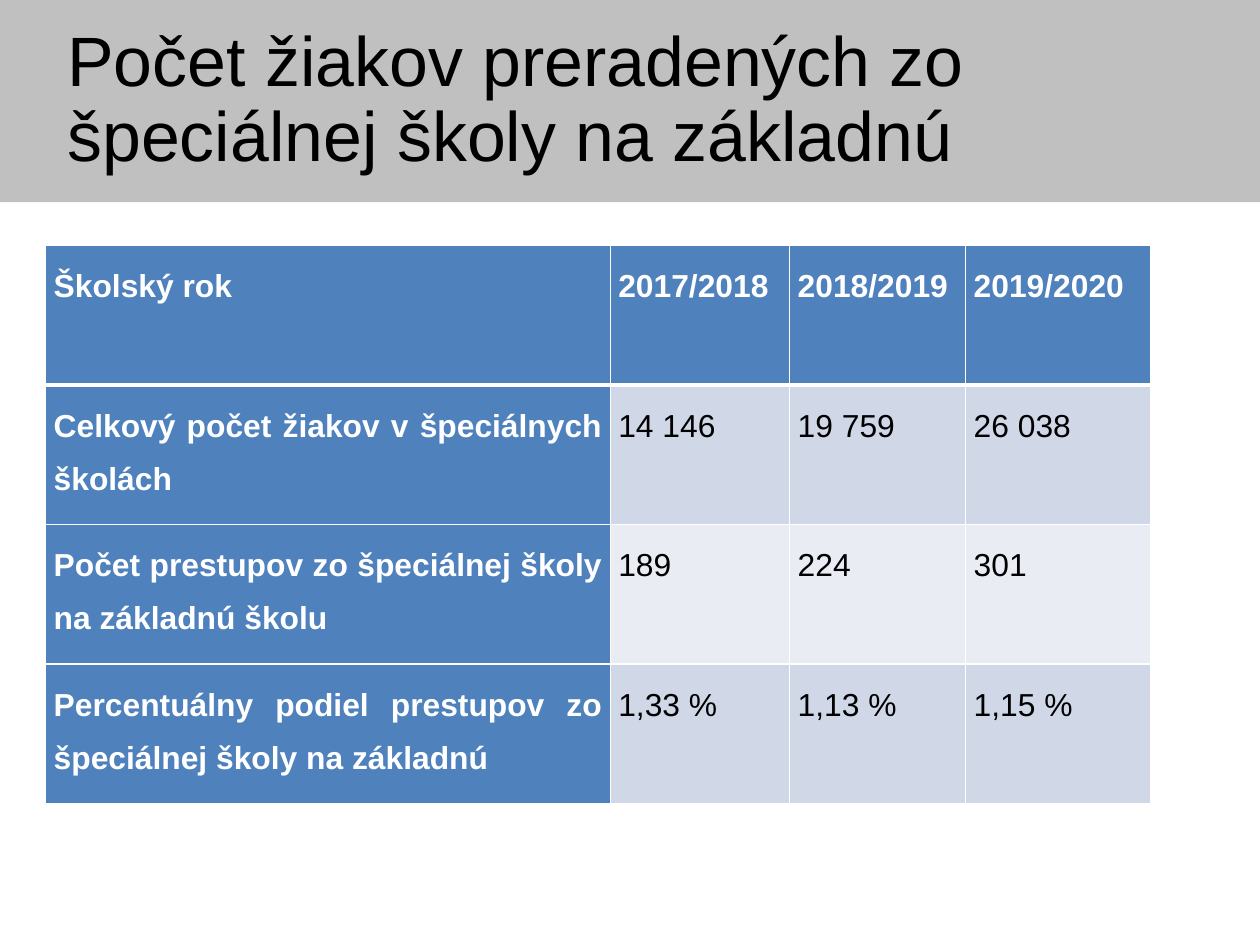
from lxml.etree import SubElement
from pptx import Presentation
from pptx.dml.color import RGBColor
from pptx.enum.shapes import MSO_SHAPE as Shape
from pptx.enum.text import MSO_ANCHOR as Anchor, PP_ALIGN as Align
from pptx.oxml.ns import qn
from pptx.util import Inches, Pt

TITLE = "Počet žiakov preradených zo špeciálnej školy na základnú"
ROWS = [
    ("Školský rok", "2017/2018", "2018/2019", "2019/2020"),
    ("Celkový počet žiakov v špeciálnych školách", "14 146", "19 759", "26 038"),
    ("Počet prestupov zo špeciálnej školy na základnú školu", "189", "224", "301"),
    ("Percentuálny podiel prestupov zo špeciálnej školy na základnú",
     "1,33 %", "1,13 %", "1,15 %"),
]
CM_PER_INCH = 2.54
SLIDE_WIDTH = Inches(28 / CM_PER_INCH)
SLIDE_HEIGHT = Inches(21 / CM_PER_INCH)
COLUMN_WIDTHS = (4.94, 1.57, 1.54, 1.62)
ROW_HEIGHT = 1.22
THIN, THICK = 0.96, 3

FONT = "Arial"
BLACK = RGBColor(0x00, 0x00, 0x00)
WHITE = RGBColor(0xFF, 0xFF, 0xFF)
GREY = RGBColor(0xC0, 0xC0, 0xC0)
BLUE = RGBColor(0x4F, 0x81, 0xBD)
BANDS = (RGBColor(0xE9, 0xEC, 0xF3), RGBColor(0xD0, 0xD8, 0xE7))


def add_run(paragraph, text, size, color, bold=False):
    run = paragraph.add_run()
    run.text = text
    run.font.name = FONT
    run.font.size = Pt(size)
    run.font.bold = bold
    run.font.color.rgb = color


def set_borders(cell, top, bottom):
    """Draw white cell borders; call before the cell gets its fill."""
    properties = cell._tc.get_or_add_tcPr()
    for side, width in (("L", THIN), ("R", THIN), ("T", top), ("B", bottom)):
        line = SubElement(properties, qn(f"a:ln{side}"), w=str(Pt(width)))
        fill = SubElement(line, qn("a:solidFill"))
        SubElement(fill, qn("a:srgbClr"), val=str(WHITE))


def add_title(slide):
    band = slide.shapes.add_shape(Shape.RECTANGLE, 0, 0, SLIDE_WIDTH, Inches(1.77))
    band.shadow.inherit = False
    band.fill.solid()
    band.fill.fore_color.rgb = GREY
    band.line.fill.background()

    title = slide.shapes.add_textbox(Inches(0.59), Inches(0.2), Inches(9.84), Inches(1.37))
    frame = title.text_frame
    frame.word_wrap = True
    frame.vertical_anchor = Anchor.MIDDLE
    frame.margin_left = frame.margin_right = frame.margin_top = frame.margin_bottom = 0
    paragraph = frame.paragraphs[0]
    paragraph.line_spacing = 0.9
    add_run(paragraph, TITLE, 44, BLACK)


def fill_cell(cell, text, row, column):
    is_heading = row == 0 or column == 0
    set_borders(cell, THICK if row == 1 else THIN, THICK if row == 0 else THIN)
    cell.fill.solid()
    cell.fill.fore_color.rgb = BLUE if is_heading else BANDS[row % 2]
    cell.margin_left = cell.margin_right = Inches(0.07)
    cell.margin_top = cell.margin_bottom = Inches(0.05)
    paragraph = cell.text_frame.paragraphs[0]
    paragraph.alignment = Align.JUSTIFY
    paragraph.line_spacing = 1.5
    add_run(paragraph, text, 20, WHITE if is_heading else BLACK, is_heading)


def add_transfer_table(slide):
    table = slide.shapes.add_table(
        len(ROWS), len(COLUMN_WIDTHS), Inches(0.4), Inches(2.15),
        Inches(sum(COLUMN_WIDTHS)), Inches(ROW_HEIGHT * len(ROWS))).table
    for column, width in zip(table.columns, COLUMN_WIDTHS):
        column.width = Inches(width)
    for row, texts in enumerate(ROWS):
        table.rows[row].height = Inches(ROW_HEIGHT)
        for column, text in enumerate(texts):
            fill_cell(table.cell(row, column), text, row, column)


def main():
    presentation = Presentation()
    presentation.slide_width = SLIDE_WIDTH
    presentation.slide_height = SLIDE_HEIGHT
    slide = presentation.slides.add_slide(presentation.slide_layouts[6])
    add_title(slide)
    add_transfer_table(slide)
    presentation.save("out.pptx")


if __name__ == "__main__":
    main()
